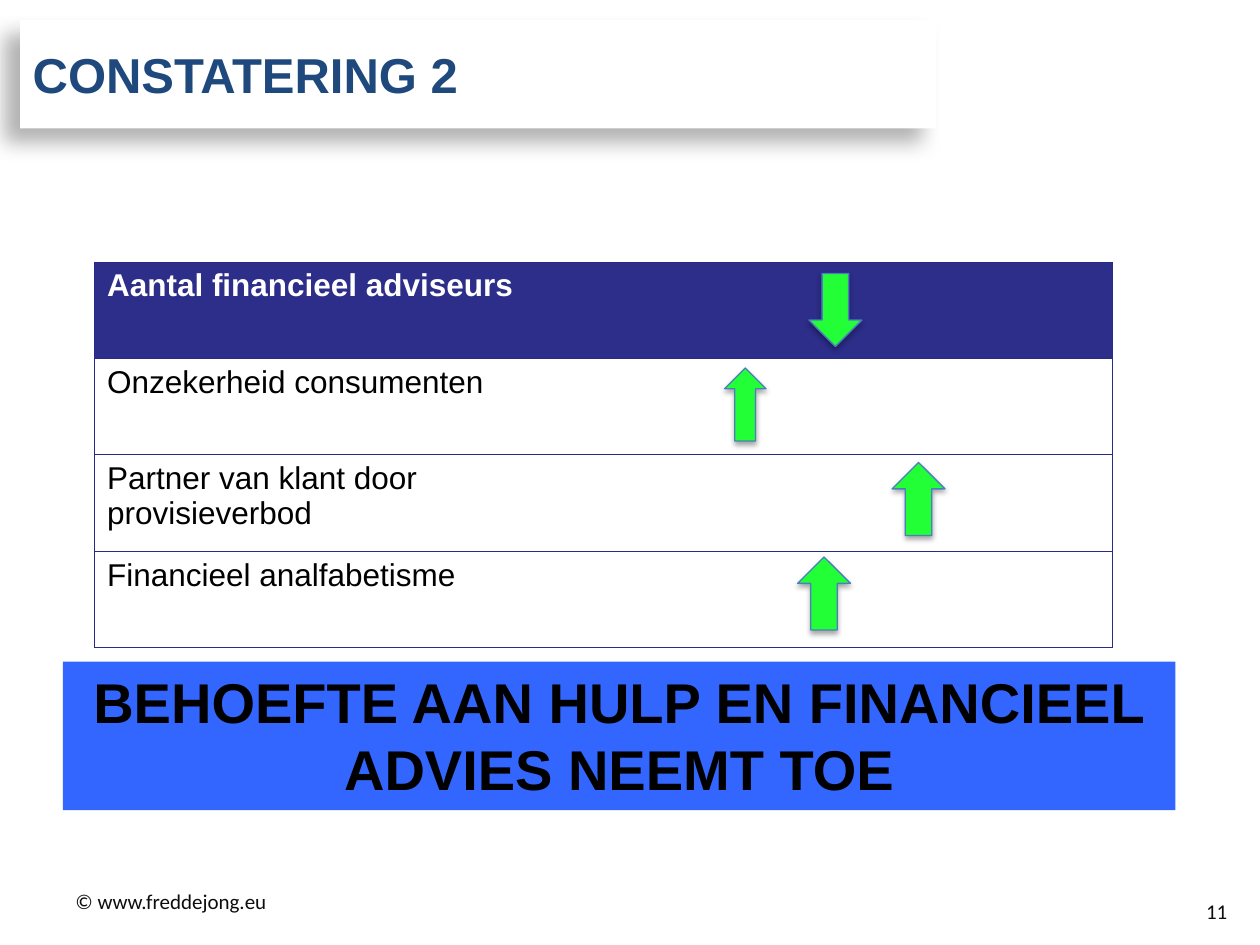
from pptx import Presentation
from pptx.dml.color import RGBColor
from pptx.enum.shapes import MSO_SHAPE
from pptx.enum.text import MSO_ANCHOR, PP_ALIGN
from pptx.oxml import parse_xml
from pptx.oxml.ns import nsdecls, qn
from pptx.util import Inches, Pt

WHITE = RGBColor(0xFF, 0xFF, 0xFF)
BLACK = RGBColor(0x00, 0x00, 0x00)
TITLE_BLUE = RGBColor(0x1F, 0x49, 0x7D)
HEADER_BLUE = RGBColor(0x2D, 0x2D, 0x8A)
BORDER_BLUE = RGBColor(0x29, 0x29, 0x89)
BANNER_BLUE = RGBColor(0x33, 0x66, 0xFF)
GREEN = RGBColor(0x23, 0xFF, 0x36)
ARROW_LINE = RGBColor(0x4B, 0x7E, 0xBC)
FOOTER_GREY = RGBColor(0x0D, 0x0D, 0x0D)


def write(tf, text, size=18, color=BLACK, bold=False, font="Arial",
          align=PP_ALIGN.LEFT, anchor=MSO_ANCHOR.TOP):
    tf.word_wrap = True
    tf.vertical_anchor = anchor
    p = tf.paragraphs[0]
    p.alignment = align
    r = p.add_run()
    r.text = text
    r.font.name = font
    r.font.size = Pt(size)
    r.font.bold = bold
    r.font.color.rgb = color


def add_shadow(shape, alpha, blur, dist, angle):
    shape.shadow.inherit = False
    effects = shape.element.spPr.find(qn("a:effectLst"))
    effects.append(parse_xml(
        f'<a:outerShdw {nsdecls("a")} blurRad="{Pt(blur)}" dist="{Pt(dist)}" '
        f'dir="{angle * 60000}" algn="ctr" rotWithShape="0"><a:srgbClr val="000000">'
        f'<a:alpha val="{alpha * 1000}"/></a:srgbClr></a:outerShdw>'))


prs = Presentation()
prs.slide_width, prs.slide_height = Inches(10), Inches(7.5)
s = prs.slides.add_slide(prs.slide_layouts[5])

# Title
title = s.shapes.title
title.left, title.top = Inches(0.16), Inches(0.16)
title.width, title.height = Inches(7.27), Inches(0.86)
title.fill.solid()
title.fill.fore_color.rgb = WHITE
add_shadow(title, 30, 12, 12, 140)
write(title.text_frame, "CONSTATERING 2", size=28, color=TITLE_BLUE, bold=True,
      anchor=MSO_ANCHOR.MIDDLE)

# Table of findings, with no line between its two columns
findings = ["Aantal financieel adviseurs", "Onzekerheid consumenten",
            "Partner van klant door provisieverbod", "Financieel analfabetisme"]
table = s.shapes.add_table(len(findings), 2, Inches(0.75), Inches(2.08),
                           Inches(8.08), Inches(3.06)).table
table.horz_banding = False
for i, finding in enumerate(findings):
    for j in range(2):
        cell = table.cell(i, j)
        tcPr = cell._tc.get_or_add_tcPr()
        inner = "R" if j == 0 else "L"
        for side in "LRTB":
            paint = ("<a:noFill/>" if side == inner else
                     f'<a:solidFill><a:srgbClr val="{BORDER_BLUE}"/></a:solidFill>')
            tcPr.append(parse_xml(
                f'<a:ln{side} {nsdecls("a")} w="{Pt(0.75)}">{paint}</a:ln{side}>'))
        if i == 0:
            cell.fill.solid()
            cell.fill.fore_color.rgb = HEADER_BLUE
        else:
            cell.fill.background()
    write(table.cell(i, 0).text_frame, finding,
          color=WHITE if i == 0 else BLACK, bold=i == 0)

# One trend arrow per row
arrows = [(MSO_SHAPE.DOWN_ARROW, 6.42, 0.42), (MSO_SHAPE.UP_ARROW, 5.75, 0.33),
          (MSO_SHAPE.UP_ARROW, 7.08, 0.42), (MSO_SHAPE.UP_ARROW, 6.33, 0.42)]
for i, (kind, left, width) in enumerate(arrows):
    arrow = s.shapes.add_shape(kind, Inches(left), Inches(2.17 + 0.75 * i),
                               Inches(width), Inches(0.58))
    arrow.fill.solid()
    arrow.fill.fore_color.rgb = GREEN
    arrow.line.color.rgb = ARROW_LINE
    arrow.line.width = Pt(0.75)
    add_shadow(arrow, 35, 3.1, 1.8, 90)

# Conclusion banner
banner = s.shapes.add_shape(MSO_SHAPE.RECTANGLE, Inches(0.5), Inches(5.25),
                            Inches(8.83), Inches(1.18))
banner.shadow.inherit = False
banner.fill.solid()
banner.fill.fore_color.rgb = BANNER_BLUE
banner.line.fill.background()
write(banner.text_frame, "BEHOEFTE AAN HULP EN FINANCIEEL ADVIES NEEMT TOE",
      size=32, bold=True, align=PP_ALIGN.CENTER)

# Footer and page number
for text, left, top, align in [("© www.freddejong.eu", 0.5, 6.95, PP_ALIGN.LEFT),
                               ("11", 7.51, 7.03, PP_ALIGN.RIGHT)]:
    box = s.shapes.add_textbox(Inches(left), Inches(top), Inches(2.33), Inches(0.4))
    write(box.text_frame, text, size=12, color=FOOTER_GREY, font="Calibri",
          align=align, anchor=MSO_ANCHOR.MIDDLE)

prs.save("out.pptx")
